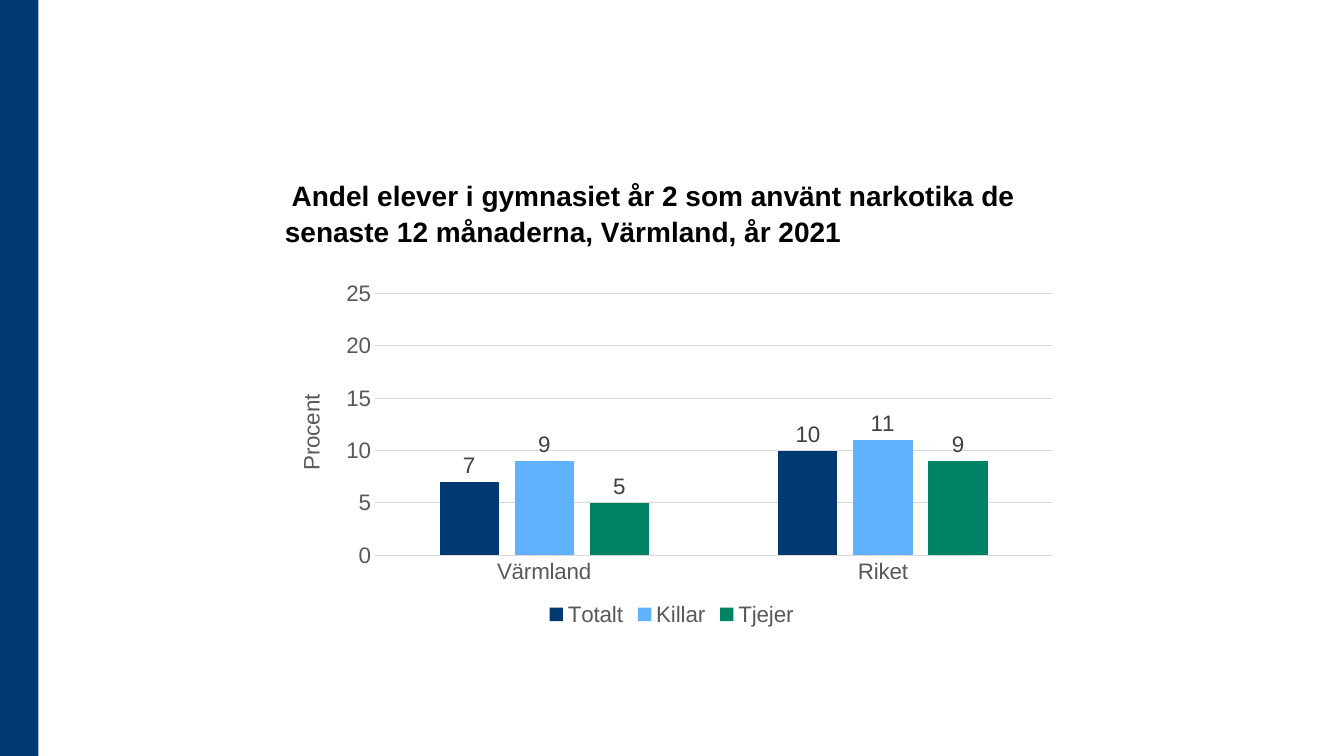
from pptx import Presentation, util as u
from pptx.chart.data import CategoryChartData
from pptx.dml.color import RGBColor
from pptx.enum import chart as ch, shapes, text

FONT = "Arial"
NAVY, GREY, GRID = "003A70", "595959", "D9D9D9"
CATEGORIES = ["Värmland", "Riket"]
SERIES = [
    ("Totalt", [7, 10], NAVY),
    ("Killar", [9, 11], "60B2FF"),
    ("Tjejer", [5, 9], "008264"),
]


def rgb(value):
    return RGBColor.from_string(value)


def set_font(font, size, color, bold=False):
    for name, value in {"name": FONT, "size": u.Pt(size), "bold": bold}.items():
        setattr(font, name, value)
    font.color.rgb = rgb(color)


def set_line(line, color, width=0.75):
    line.color.rgb = rgb(color)
    line.width = u.Pt(width)


def add_bar(s, x, y, w, h, color):
    sp = s.shapes.add_shape(shapes.MSO_SHAPE.RECTANGLE, x, y, w, h)
    sp.shadow.inherit = False
    sp.fill.solid()
    sp.fill.fore_color.rgb = rgb(color)
    sp.line.fill.background()


def add_title(s, x, y, w, h, wording):
    tf = s.shapes.add_textbox(x, y, w, h).text_frame
    layout = {"word_wrap": True, "vertical_anchor": text.MSO_ANCHOR.BOTTOM}
    for name, value in layout.items():
        setattr(tf, name, value)
    p = tf.paragraphs[0]
    p.line_spacing = 1.05
    r = p.add_run()
    r.text = wording
    set_font(r.font, 20, "000000", bold=True)


def format_axes(chart):
    for axis in (chart.category_axis, chart.value_axis):
        axis.major_tick_mark = axis.minor_tick_mark = ch.XL_TICK_MARK.NONE
        set_font(axis.tick_labels.font, 16, GREY)
    set_line(chart.category_axis.format.line, GRID)

    axis = chart.value_axis
    limits = {"minimum_scale": 0, "maximum_scale": 25, "major_unit": 5,
              "has_major_gridlines": True}
    for name, value in limits.items():
        setattr(axis, name, value)
    set_line(axis.major_gridlines.format.line, GRID)
    axis.format.line.fill.background()
    axis.tick_labels.number_format = "0"
    axis.tick_labels.number_format_is_linked = False
    p = axis.axis_title.text_frame.paragraphs[0]
    r = p.add_run()
    r.text = "Procent"
    set_font(r.font, 16, GREY)


def format_series(series, color):
    series.format.fill.solid()
    series.format.fill.fore_color.rgb = rgb(color)
    labels = series.data_labels
    options = {"show_value": True, "number_format": "0",
               "number_format_is_linked": False,
               "position": ch.XL_LABEL_POSITION.OUTSIDE_END}
    for name, value in options.items():
        setattr(labels, name, value)
    set_font(labels.font, 16, "404040")


def add_columns(s, x, y, w, h):
    data = CategoryChartData(number_format="0")
    data.categories = CATEGORIES
    for name, values, _ in SERIES:
        data.add_series(name, values)
    chart = s.shapes.add_chart(
        ch.XL_CHART_TYPE.COLUMN_CLUSTERED, x, y, w, h, data).chart
    set_font(chart.font, 16, "000000")
    chart.has_title = False
    format_axes(chart)

    # Columns
    plot = chart.plots[0]
    for name, value in {"gap_width": 219, "overlap": -27,
                        "vary_by_categories": False}.items():
        setattr(plot, name, value)
    for series, (_, _, color) in zip(plot.series, SERIES):
        format_series(series, color)

    # Legend
    chart.has_legend = True
    chart.legend.position = ch.XL_LEGEND_POSITION.BOTTOM
    chart.legend.include_in_layout = False
    set_font(chart.legend.font, 16, GREY)


def main():
    prs = Presentation()
    prs.slide_width, prs.slide_height = u.Cm(33.87), u.Cm(19.05)
    s = prs.slides.add_slide(prs.slide_layouts[6])

    # Side band
    add_bar(s, 0, 0, u.Cm(0.97), prs.slide_height, NAVY)

    # Heading and chart share a left edge
    left = u.Cm(6.93)
    add_title(s, left, u.Cm(2.69), u.Cm(20.42), u.Cm(3.68),
              " Andel elever i gymnasiet år 2 som använt narkotika de "
              "senaste 12 månaderna, Värmland, år 2021")
    add_columns(s, left, u.Cm(6.91), u.Cm(19.99), u.Cm(8.99))

    prs.save("out.pptx")


if __name__ == "__main__":
    main()
